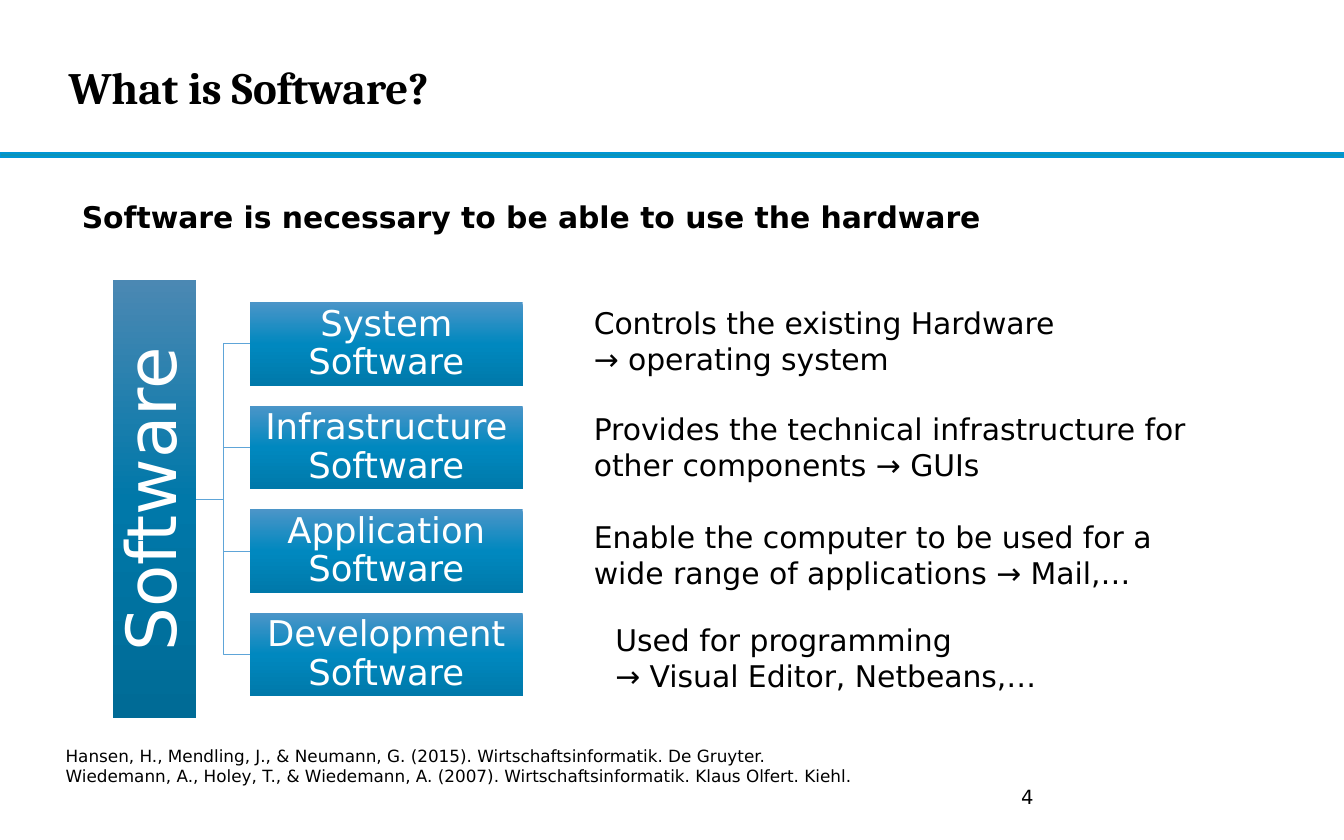
"""Build the slide "What is Software?" with a hierarchy of software types."""
from copy import deepcopy

from lxml.etree import SubElement
from pptx import Presentation
from pptx.dml.color import RGBColor
from pptx.enum.shapes import MSO_CONNECTOR as Connector, MSO_SHAPE as Shape
from pptx.enum.text import MSO_ANCHOR as Anchor, PP_ALIGN as Align
from pptx.oxml.ns import qn
from pptx.util import Inches, Pt

color = RGBColor.from_string


def write(shape, text, size, font_color="000000", bold=False, font_name="DejaVu Sans"):
    text_frame = shape.text_frame
    text_frame.word_wrap = True
    text_frame.text = text
    for paragraph in text_frame.paragraphs:
        font = paragraph.font
        font.name, font.size, font.bold = font_name, Pt(size), bold
        font.color.rgb = color(font_color)
    return text_frame


def add_block(left, top, width, height, text, size, margin, stops, rotation=0):
    block = slide.shapes.add_shape(
        Shape.RECTANGLE, Inches(left), Inches(top), Inches(width), Inches(height))
    block.rotation = rotation
    block.shadow.inherit = False
    block.line.fill.background()
    block.fill.gradient()
    block.fill.gradient_angle = 270
    gradient = block._element.spPr.find(qn("a:gradFill"))
    gradient.set("rotWithShape", "0")
    stop_list = gradient.find(qn("a:gsLst"))
    stop_list.insert(1, deepcopy(stop_list[0]))
    for stop, position, stop_color in zip(block.fill.gradient_stops, (0, 0.5, 1), stops):
        stop.position = position
        stop.color.rgb = color(stop_color)
    text_frame = write(block, text, size, "FFFFFF")
    text_frame.vertical_anchor = Anchor.MIDDLE
    text_frame.margin_left = text_frame.margin_right = Inches(margin)
    text_frame.margin_top = text_frame.margin_bottom = Inches(margin)
    text_frame.paragraphs[0].alignment = Align.CENTER
    text_frame.paragraphs[0].line_spacing = 0.9


presentation = Presentation()
presentation.slide_width, presentation.slide_height = Inches(10), Inches(6.25)
slide = presentation.slides.add_slide(presentation.slide_layouts[5])

rule = slide.shapes.add_shape(Shape.RECTANGLE, 0, Inches(1.14), Inches(10), Inches(0.03))
rule.shadow.inherit = False
rule.fill.solid()
rule.fill.fore_color.rgb = color("0C94B7")
rule.line.color.rgb = color("0096D3")
rule.line.width = Pt(1)

title = slide.shapes.title
title.left, title.top = Inches(0.51), Inches(0.15)
title.width, title.height = Inches(7.48), Inches(0.99)
title_frame = write(title, "What is Software?", 24, bold=True, font_name="Cambria")
title_frame.vertical_anchor = Anchor.MIDDLE
title_frame.margin_left = title_frame.margin_right = 0
title_frame.margin_top = title_frame.margin_bottom = 0
title_frame.paragraphs[0].alignment = Align.LEFT

row_top, row_step, block_height = 2.25, 0.77, 0.62
block_left, block_width = 1.86, 2.03
bar_center, bar_right, bar_length = 1.15, 1.46, 3.26
middle = row_top + 1.5 * row_step + block_height / 2
block_stops = ("4B95C8", "0088BF", "0079AA")

for row, kind in enumerate(("System", "Infrastructure", "Application", "Development")):
    top = row_top + row * row_step
    branch = slide.shapes.add_connector(
        Connector.ELBOW, Inches(bar_right), Inches(middle),
        Inches(block_left), Inches(top + block_height / 2))
    branch.line.color.rgb = color("5EA5D8")
    branch.line.width = Pt(0.5)
    SubElement(branch._element.spPr, qn("a:effectLst"))
    add_block(block_left, top, block_width, block_height,
              f"{kind} Software", 19, 0.01, block_stops)

add_block(bar_center - bar_length / 2, middle - block_height / 2, bar_length, block_height,
          "Software", 37, 0.03, ("4B88B3", "0078A9", "006B96"), rotation=270)

texts = (
    (0.51, 1.43, 8.38, 0.37, 16, True, "Software is necessary to be able to use the hardware"),
    (4.32, 2.22, 4.24, 0.64, 16, False, "Controls the existing Hardware\n→ operating system"),
    (4.32, 3.01, 4.81, 0.64, 16, False,
     "Provides the technical infrastructure for other components → GUIs"),
    (4.32, 3.81, 4.81, 0.64, 16, False,
     "Enable the computer to be used for a wide range of applications → Mail,…"),
    (4.48, 4.58, 4.81, 0.64, 16, False, "Used for programming\n→ Visual Editor, Netbeans,…"),
    (0.39, 5.5, 7.87, 0.4, 9, False,
     "Hansen, H., Mendling, J., & Neumann, G. (2015). Wirtschaftsinformatik. De Gruyter.\n"
     "Wiedemann, A., Holey, T., & Wiedemann, A. (2007). Wirtschaftsinformatik. "
     "Klaus Olfert. Kiehl."),
    (7.5, 5.79, 0.54, 0.28, 10.5, False, "4"),
)
for left, top, width, height, size, bold, text in texts:
    box = slide.shapes.add_textbox(Inches(left), Inches(top), Inches(width), Inches(height))
    write(box, text, size, bold=bold)

presentation.save("out.pptx")
